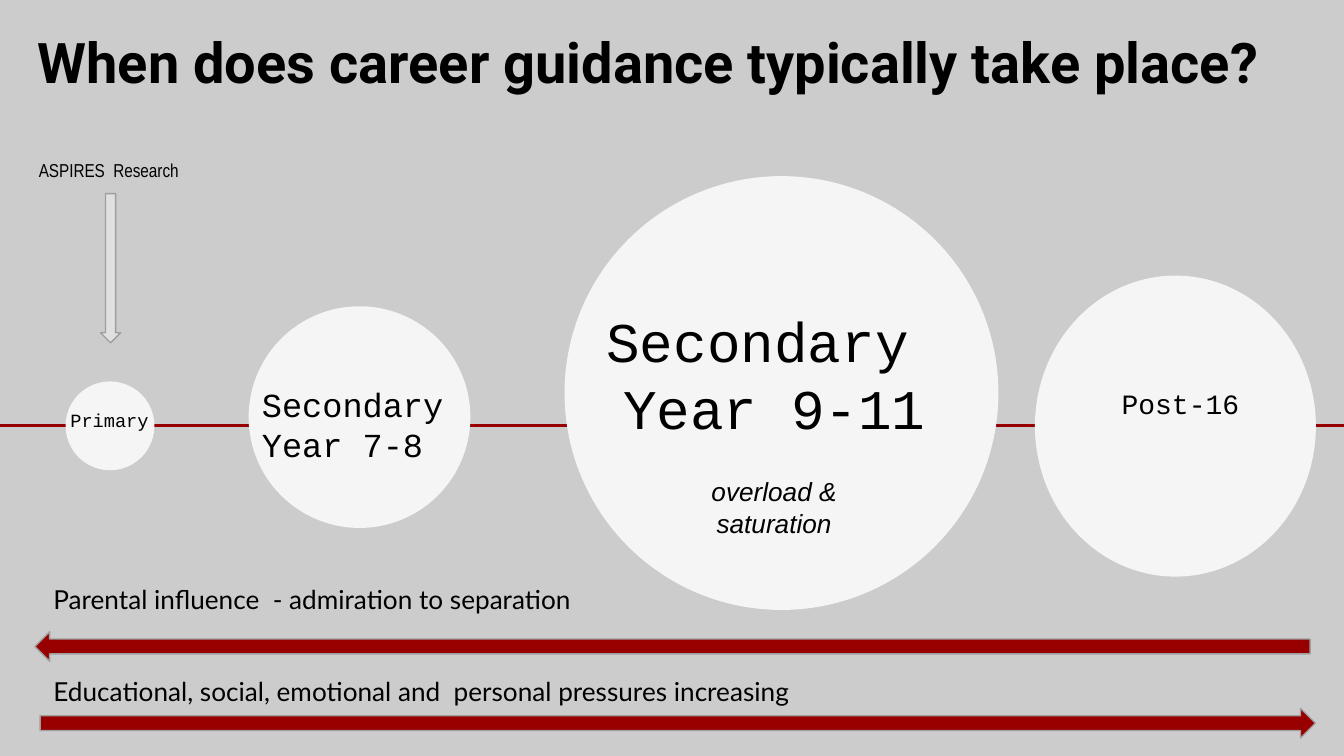
"""Builds a slide on when career guidance takes place, from primary school to post-16."""
from dataclasses import dataclass

from lxml import etree
from pptx import Presentation
from pptx import util as u
from pptx.dml.color import RGBColor
from pptx.enum import shapes, text
from pptx.oxml import ns


@dataclass(frozen=True)
class Theme:
    background: str = "CCCCCC"
    ink: str = "000000"
    accent: str = "980000"
    stage: str = "F5F5F5"
    pointer: str = "E0E0E0"
    outline: str = "9E9E9E"
    heading: int = 30
    stage_medium: int = 18
    stage_small: int = 15
    body: int = 14
    label: int = 10


theme = Theme()
LEFT, CENTER = text.PP_ALIGN.LEFT, text.PP_ALIGN.CENTER
TOP, MIDDLE = text.MSO_ANCHOR.TOP, text.MSO_ANCHOR.MIDDLE


def add_figure(kind, box, fill, outline=None):
    figure = slide.shapes.add_shape(kind, *map(u.Cm, box))
    figure.shadow.inherit = False
    figure.fill.solid()
    figure.fill.fore_color.rgb = RGBColor.from_string(fill)
    if outline:
        figure.line.color.rgb = RGBColor.from_string(outline)
        figure.line.width = u.Pt(0.75)
    else:
        figure.line.fill.background()


def add_words(words, box, size, face, align=CENTER, anchor=TOP, bold=False, italic=False):
    frame = slide.shapes.add_textbox(*map(u.Cm, box)).text_frame
    frame.word_wrap = True
    frame.vertical_anchor = anchor
    frame.margin_left = frame.margin_right = u.Cm(0.25)
    frame.margin_top = frame.margin_bottom = u.Cm(0.25)
    frame.text = words
    for paragraph in frame.paragraphs:
        paragraph.alignment = align
        font = paragraph.font
        font.name, font.size = face, u.Pt(size)
        font.bold, font.italic = bold, italic
        font.color.rgb = RGBColor.from_string(theme.ink)


presentation = Presentation()
presentation.slide_width, presentation.slide_height = u.Cm(25.4), u.Cm(14.29)
slide = presentation.slides.add_slide(presentation.slide_layouts[6])
slide.background.fill.solid()
slide.background.fill.fore_color.rgb = RGBColor.from_string(theme.background)

timeline = slide.shapes.add_connector(
    shapes.MSO_CONNECTOR.STRAIGHT, u.Cm(-0.03), u.Cm(8.05), u.Cm(25.4), u.Cm(8.05)
)
timeline.line.color.rgb = RGBColor.from_string(theme.accent)
timeline.line.width = u.Pt(1.5)
etree.SubElement(timeline._element.spPr, ns.qn("a:effectLst"))

add_words("When does career guidance typically take place?", (0.46, 0.28, 24.66, 1.6),
          theme.heading, "Roboto", LEFT, bold=True)

stages = [
    ("Primary", (1.24, 7.21, 1.68, 1.68), (0.23, 7.14, 3.68, 1.6), theme.label),
    ("Secondary \nYear 9-11", (10.67, 3.33, 8.2, 8.2), (10.8, 5.94, 7.67, 2.24), theme.heading),
    (" Secondary\nYear 7-8 ", (4.7, 5.79, 4.19, 4.19), (4.57, 6.83, 4.19, 1.6), theme.stage_medium),
    ("Post-16", (19.56, 5.21, 5.31, 5.69), (20.62, 6.78, 3.38, 1.68), theme.stage_small),
]
for stage, circle, caption, size in stages:
    add_figure(shapes.MSO_SHAPE.OVAL, circle, theme.stage)
    add_words(stage, caption, size, "Courier New", anchor=MIDDLE)

add_words("overload & saturation", (12.7, 8.74, 3.86, 1.22), theme.body, "Arial", italic=True)

trends = [
    ("Parental influence  - admiration to separation", (0.76, 10.77, 11.02, 1.22),
     shapes.MSO_SHAPE.LEFT_ARROW, (0.66, 11.94, 24.1, 0.56)),
    ("Educational, social, emotional and  personal pressures increasing", (0.76, 12.52, 21.44, 1.22),
     shapes.MSO_SHAPE.RIGHT_ARROW, (0.76, 13.39, 24.1, 0.56)),
]
for trend, caption, direction, arrow in trends:
    add_figure(direction, arrow, theme.accent, theme.outline)
    add_words(trend, caption, theme.body, "Lato", LEFT)

add_words("ASPIRES  Research ", (0.05, 2.79, 4.09, 0.56), theme.label, "Arial Narrow")
add_figure(shapes.MSO_SHAPE.DOWN_ARROW, (1.9, 3.66, 0.38, 2.82), theme.pointer, theme.outline)

presentation.save("out.pptx")
